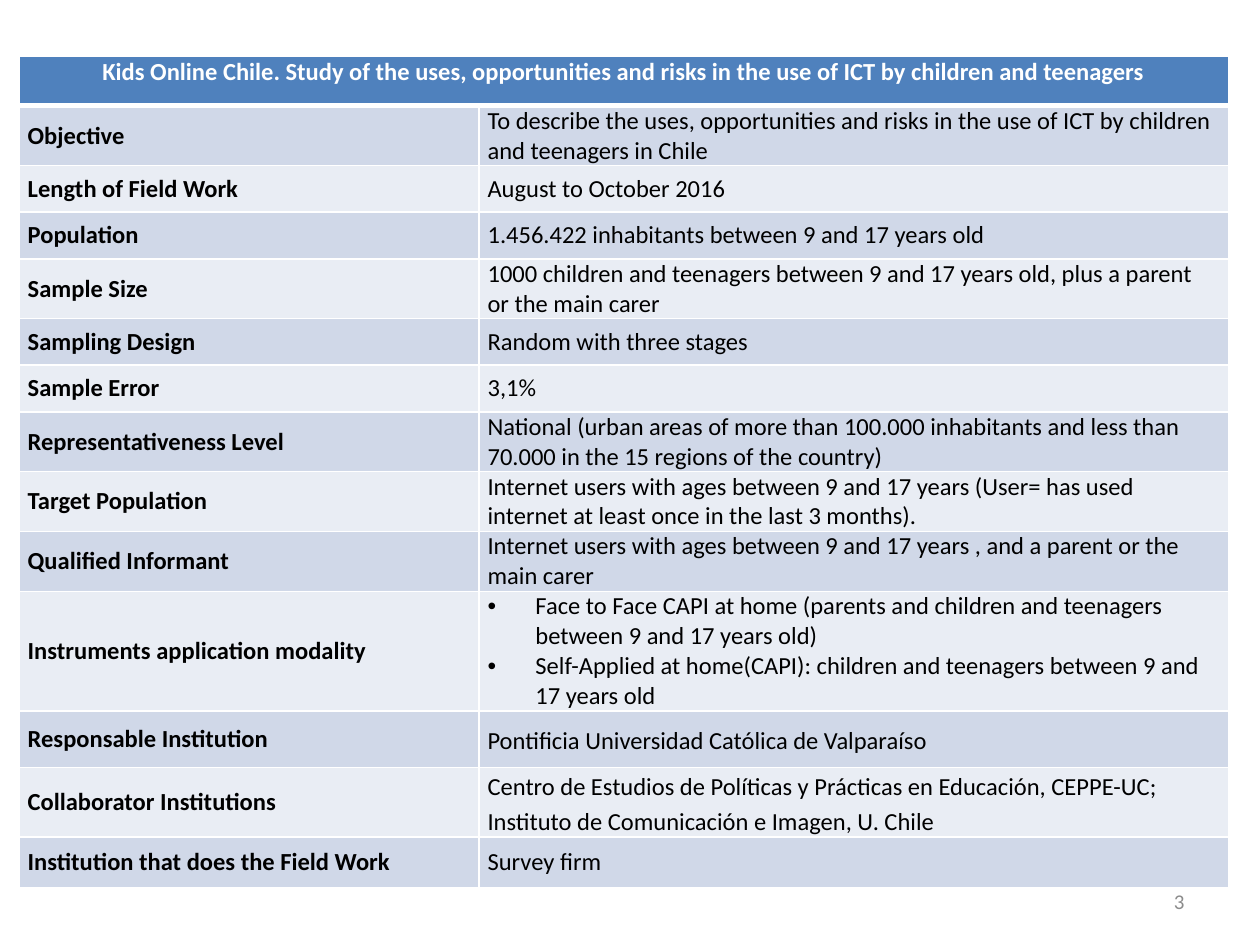
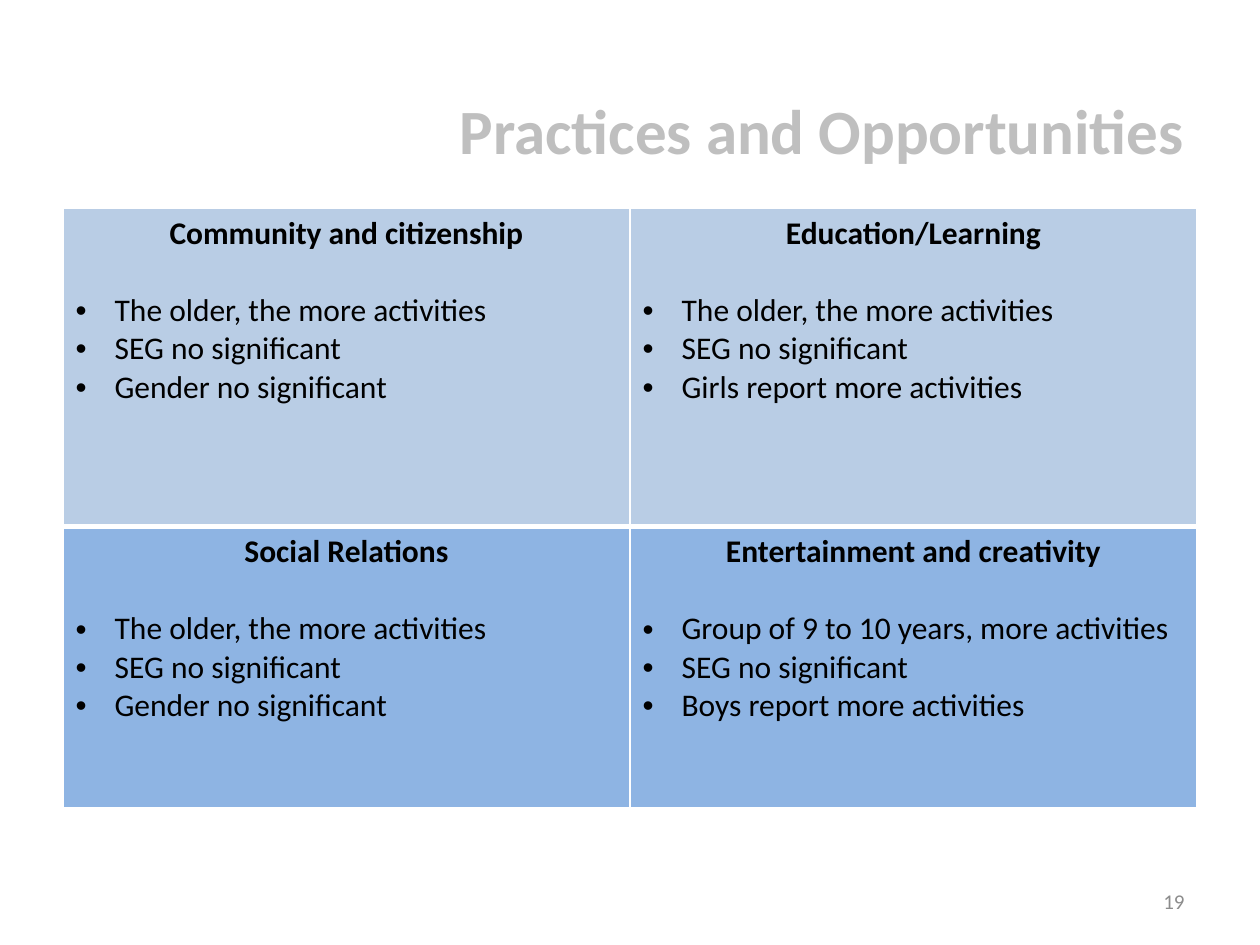
from dataclasses import dataclass
from lxml import etree
from pptx import Presentation
from pptx.dml.color import RGBColor
from pptx.enum.text import MSO_ANCHOR, PP_ALIGN
from pptx.oxml.ns import qn
from pptx.util import Emu, Inches, Pt

LEFT, MID, RIGHT = PP_ALIGN.LEFT, PP_ALIGN.CENTER, PP_ALIGN.RIGHT
TOP, CENTER = MSO_ANCHOR.TOP, MSO_ANCHOR.MIDDLE
COLS, ROWS = 200, 150
TITLE_ONLY, BLANK = 5, 6


@dataclass(frozen=True)
class Theme:
    font: str = "Calibri"
    white: str = "FFFFFF"
    black: str = "000000"
    head: str = "4F81BD"
    bands: tuple = ("D0D8E8", "E9EDF4")
    quads: tuple = ("B9CDE5", "8EB4E3")
    title: str = "BFBFBF"
    foot: str = "8C8C8C"
    title_size: int = 36
    quad_size: int = 18
    fact_size: int = 14
    foot_size: int = 12
    thin: int = 1
    thick: int = 3


T = Theme()

STUDY = ("Kids Online Chile. Study of the uses, opportunities and risks "
         "in the use of ICT by children and teenagers")
FACTS = [
    ("Objective", 9.5, "To describe the uses, opportunities and risks in the use "
     "of ICT by children and teenagers in Chile"),
    ("Length of Field Work", 7.4, "August to October 2016"),
    ("Population", 7.4, "1.456.422 inhabitants between 9 and 17 years old"),
    ("Sample Size", 9.5, "1000 children and teenagers between 9 and 17 years old, "
     "plus a parent or the main carer"),
    ("Sampling Design", 7.4, "Random with three stages"),
    ("Sample Error", 7.4, "3,1%"),
    ("Representativeness Level", 9.5, "National (urban areas of more than 100.000 "
     "inhabitants and less than 70.000 in the 15 regions of the country)"),
    ("Target Population", 9.5, "Internet users with ages between 9 and 17 years "
     "(User= has used internet at least once in the last 3 months)."),
    ("Qualified Informant", 9.5, "Internet users with ages between 9 and 17 years , "
     "and a parent or the main carer"),
    ("Instruments application modality", 19, [
        "Face to Face CAPI at home (parents and children and teenagers "
        "between 9 and 17 years old)",
        "Self-Applied at home(CAPI): children and teenagers between 9 and "
        "17 years old"]),
    ("Responsable Institution", 9, "Pontificia Universidad Católica de Valparaíso"),
    ("Collaborator Institutions", 11, "Centro de Estudios de Políticas y Prácticas en "
     "Educación, CEPPE-UC; Instituto de Comunicación e Imagen, U. Chile"),
    ("Institution that does the Field Work", 8, "Survey firm"),
]
LOOSE = ("Responsable Institution", "Collaborator Institutions")

OLDER, SEG, GENDER = ("The older, the more activities", "SEG no significant",
                      "Gender no significant")
QUADS = [
    [("Community and citizenship", [OLDER, SEG, GENDER]),
     ("Education/Learning", [OLDER, SEG, "Girls report more activities"])],
    [("Social Relations", [OLDER, SEG, GENDER]),
     ("Entertainment and creativity",
      ["Group of 9 to 10 years, more activities", SEG, "Boys report more activities"])],
]


def wide(n):
    return Emu(round(Inches(10) * n / COLS))


def high(n):
    return Emu(round(Inches(7.5) * n / ROWS))


def place(box):
    x, y, w, h = box
    return wide(x), high(y), wide(w), high(h)


def write(para, text, size, color=T.black, bold=False, align=LEFT):
    para.alignment = align
    run = para.add_run()
    run.text = text
    font = run.font
    font.name, font.size, font.bold = T.font, Pt(size), bold
    font.color.rgb = RGBColor.from_string(color)


def bullet(para, inset):
    props = para._p.get_or_add_pPr()
    props.set("marL", str(Inches(inset)))
    props.set("indent", str(-Inches(inset)))
    etree.SubElement(props, qn("a:buFont")).set("typeface", "Arial")
    etree.SubElement(props, qn("a:buChar")).set("char", "•")


def bullets(frame, items, size, inset, first):
    for i, item in enumerate(items):
        para = frame.paragraphs[0] if first and i == 0 else frame.add_paragraph()
        bullet(para, inset)
        write(para, item, size)


def border(cell, row):
    props = cell._tc.get_or_add_tcPr()
    widths = {"L": T.thin, "R": T.thin,
              "T": T.thick if row == 1 else T.thin,
              "B": T.thick if row == 0 else T.thin}
    for side, width in widths.items():
        line = etree.SubElement(props, qn("a:ln" + side), w=str(Pt(width)))
        fill = etree.SubElement(line, qn("a:solidFill"))
        etree.SubElement(fill, qn("a:srgbClr")).set("val", T.white)


def paint(cell, row, color):
    border(cell, row)
    cell.fill.solid()
    cell.fill.fore_color.rgb = RGBColor.from_string(color)


def grid(slide, x, y, cols, rows):
    box = place((x, y, sum(cols), sum(rows)))
    table = slide.shapes.add_table(len(rows), len(cols), *box).table
    table.first_row = table.horz_banding = False
    for col, size in zip(table.columns, cols):
        col.width = wide(size)
    for row, size in zip(table.rows, rows):
        row.height = high(size)
    return table


def facts(slide, x, y, cols):
    table = grid(slide, x, y, cols, [7.8] + [size for _, size, _ in FACTS])
    for r, row in enumerate(table.rows):
        for cell in row.cells:
            paint(cell, r, T.bands[(r - 1) % 2] if r else T.head)
            cell.margin_left = cell.margin_right = Inches(0.07)
            cell.margin_top = cell.margin_bottom = 0
            cell.vertical_anchor = CENTER if r else TOP
    head = table.cell(0, 0)
    head.merge(table.cell(0, 1))
    write(head.text_frame.paragraphs[0], STUDY, T.fact_size, T.white, True, MID)
    for r, (label, _, value) in enumerate(FACTS, 1):
        write(table.cell(r, 0).text_frame.paragraphs[0], label, T.fact_size, bold=True)
        frame = table.cell(r, 1).text_frame
        if isinstance(value, list):
            bullets(frame, value, T.fact_size, 0.38, True)
            continue
        para = frame.paragraphs[0]
        if label in LOOSE:
            para.line_spacing = 1.15
        write(para, value, T.fact_size)


def quads(slide, x, y, cols, rows):
    table = grid(slide, x, y, cols, rows)
    for r, pair in enumerate(QUADS):
        for c, (name, items) in enumerate(pair):
            cell = table.cell(r, c)
            paint(cell, r, T.quads[r])
            head = cell.text_frame.paragraphs[0]
            head.space_after = Pt(22)
            write(head, name, T.quad_size, bold=True, align=MID)
            bullets(cell.text_frame, items, T.quad_size, 0.31, False)


def title(slide, text, box):
    shape = slide.shapes.title
    shape.left, shape.top, shape.width, shape.height = place(box)
    frame = shape.text_frame
    frame.vertical_anchor = CENTER
    write(frame.paragraphs[0], text, T.title_size, T.title, True, RIGHT)


def footer(slide, number):
    frame = slide.shapes.add_textbox(*place((143.4, 139, 46.6, 8))).text_frame
    frame.word_wrap = True
    frame.vertical_anchor = CENTER
    write(frame.paragraphs[0], str(number), T.foot_size, T.foot, align=RIGHT)


def main():
    deck = Presentation()
    deck.slide_width, deck.slide_height = Inches(10), Inches(7.5)

    slide = deck.slides.add_slide(deck.slide_layouts[BLANK])
    footer(slide, 3)
    facts(slide, 3, 9, (73, 119))

    slide = deck.slides.add_slide(deck.slide_layouts[TITLE_ONLY])
    title(slide, "Practices and Opportunities", (10, 8, 180, 25))
    quads(slide, 10, 33, (90, 90), (50.6, 44.6))
    footer(slide, 19)

    deck.save("out.pptx")


if __name__ == "__main__":
    main()
